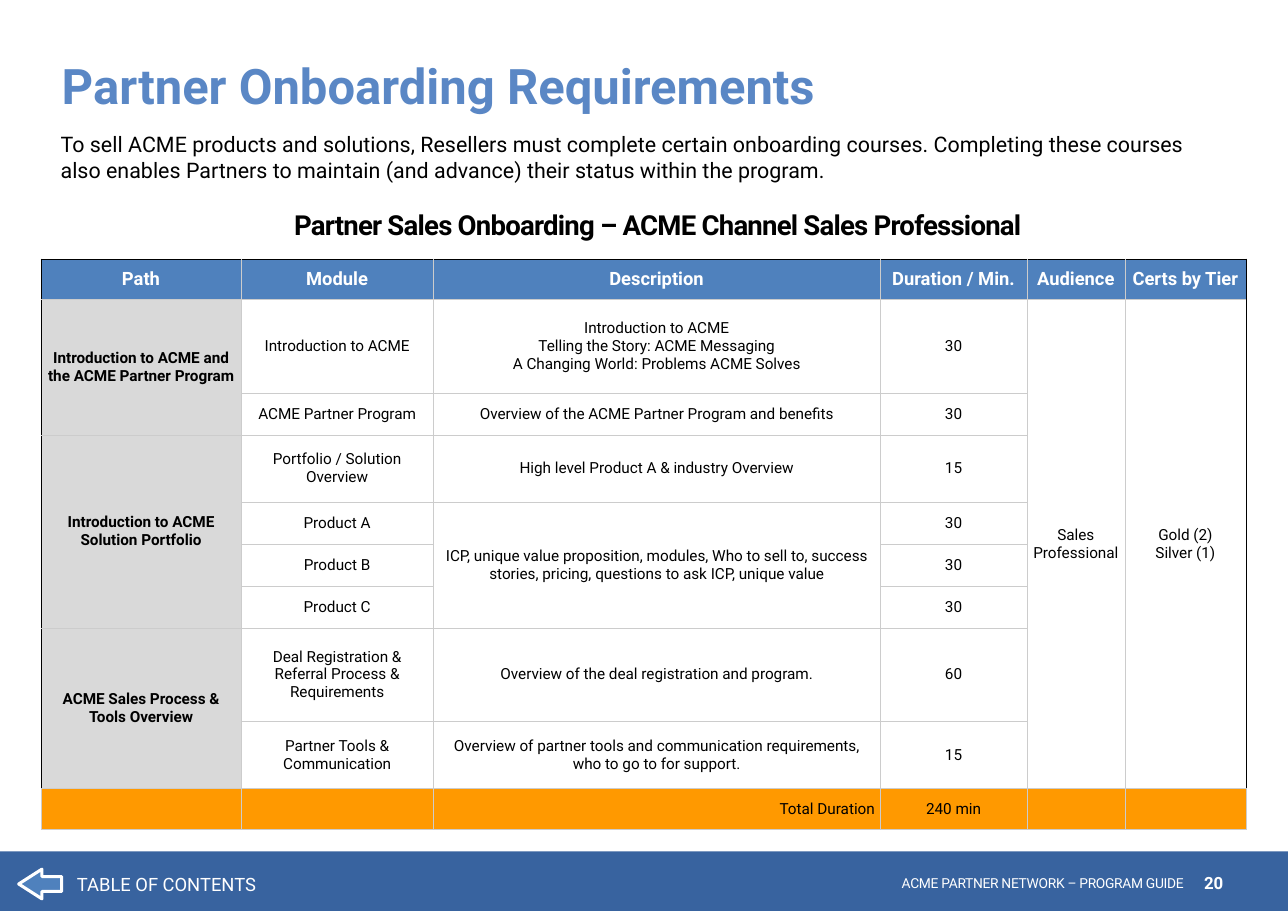
from pptx import Presentation
from pptx.dml.color import RGBColor
from pptx.enum.shapes import MSO_SHAPE as Shape
from pptx.enum.text import MSO_ANCHOR as Anchor, MSO_AUTO_SIZE as Fit, PP_ALIGN as Align
from pptx.oxml.ns import qn
from pptx.util import Inches, Pt
from lxml.etree import SubElement

# Content
TITLE = "Partner Onboarding Requirements"
INTRO = ("To sell ACME products and solutions, Resellers must complete certain "
         "onboarding courses. Completing these courses also enables Partners to "
         "maintain (and advance) their status within the program.")
HEADING = "Partner Sales Onboarding – ACME Channel Sales Professional"
GUIDE = "ACME PARTNER NETWORK – PROGRAM GUIDE"
BACK = "TABLE OF CONTENTS"
PAGE = "20"

ROWS = [
    ["Path", "Module", "Description", "Duration / Min.", "Audience", "Certs by Tier"],
    ["Introduction to ACME and the ACME Partner Program", "Introduction to ACME",
     "Introduction to ACME\vTelling the Story: ACME Messaging\v"
     "A Changing World: Problems ACME Solves",
     "30", "Sales Professional", "Gold (2)\vSilver (1)"],
    ["", "ACME Partner Program", "Overview of the ACME Partner Program and benefits",
     "30", "", ""],
    ["Introduction to ACME Solution Portfolio", "Portfolio / Solution Overview",
     "High level Product A & industry Overview", "15", "", ""],
    ["", "Product A",
     "ICP, unique value proposition, modules, Who to sell to, success stories, "
     "pricing, questions to ask ICP, unique value", "30", "", ""],
    ["", "Product B", "", "30", "", ""],
    ["", "Product C", "", "30", "", ""],
    ["ACME Sales Process & Tools Overview",
     "Deal Registration & Referral Process & Requirements",
     "Overview of the deal registration and program.", "60", "", ""],
    ["", "Partner Tools & Communication",
     "Overview of partner tools and communication requirements, "
     "who to go to for support.", "15", "", ""],
    ["", "", "Total Duration", "240 min", "", ""],
]
WIDTHS = [1.82, 1.74, 4.06, 1.33, 0.89, 1.1]
HEIGHTS = [0.37, 0.85, 0.38, 0.61, 0.38, 0.38, 0.38, 0.85, 0.61, 0.37]
# Merged cells: column, first row, last row
SPANS = [(0, 1, 2), (0, 3, 6), (0, 7, 8), (2, 4, 6), (4, 1, 8), (5, 1, 8)]

COLORS = {"title": "5A87C5", "band": "38639F", "head": "4F81BD", "path": "D9D9D9",
          "total": "FF9900", "grid": "CCCCCC", "black": "000000", "white": "FFFFFF"}
FONT = "Roboto"


def rgb(name):
    return RGBColor.from_string(COLORS[name])


def style(frame, text, size, color="black", bold=False, align=Align.LEFT,
          space=0, line=None):
    frame.text = text
    frame.word_wrap = True
    for para in frame.paragraphs:
        para.alignment = align
        if line:
            para.line_spacing = Pt(line)
        for run in para.runs:
            font = run.font
            font.name, font.size, font.bold = FONT, Pt(size), bold
            font.color.rgb = rgb(color)
            if space:
                run._r.get_or_add_rPr().set("spc", str(int(space * 100)))


def inset(part, left, top, right, bottom):
    part.margin_left, part.margin_top = Inches(left), Inches(top)
    part.margin_right, part.margin_bottom = Inches(right), Inches(bottom)


def label(slide, box, text, size, pad=(0, 0, 0, 0), **look):
    frame = slide.shapes.add_textbox(*map(Inches, box)).text_frame
    style(frame, text, size, **look)
    inset(frame, *pad)


def border(cell, row, col):
    last_row, last_col = len(ROWS) - 1, len(WIDTHS) - 1
    body = row < last_row
    dark = {"L": body and col == 0, "R": body and col == last_col,
            "T": row == 0, "B": False}
    props = cell._tc.get_or_add_tcPr()
    for side, black in dark.items():
        edge = SubElement(props, qn(f"a:ln{side}"), w=str(Pt(0.25)))
        fill = SubElement(edge, qn("a:solidFill"))
        SubElement(fill, qn("a:srgbClr"), val=COLORS["black" if black else "grid"])


def add_grid(slide):
    table = slide.shapes.add_table(
        len(ROWS), len(WIDTHS), Inches(0.37), Inches(2.35),
        Inches(sum(WIDTHS)), Inches(sum(HEIGHTS))).table
    for col, width in enumerate(WIDTHS):
        table.columns[col].width = Inches(width)
    for row, height in enumerate(HEIGHTS):
        table.rows[row].height = Inches(height)
    for row, texts in enumerate(ROWS):
        head, total = row == 0, row == len(ROWS) - 1
        for col, text in enumerate(texts):
            cell = table.cell(row, col)
            path = col == 0 and not total
            end = total and col == 2
            if text:
                style(cell.text_frame, text, 12 if head else 10,
                      "white" if head else "black", head or path,
                      Align.RIGHT if end else Align.CENTER)
            pad = 0.05 if text and not head else 0
            inset(cell, pad, pad, pad, pad)
            cell.vertical_anchor = Anchor.MIDDLE
            border(cell, row, col)
            tone = "head" if head else "total" if total else "path" if path else None
            if tone:
                cell.fill.solid()
                cell.fill.fore_color.rgb = rgb(tone)
            else:
                cell.fill.background()
    for col, first, last in SPANS:
        table.cell(first, col).merge(table.cell(last, col))


def add_shape(slide, kind, box, fill):
    shape = slide.shapes.add_shape(kind, *map(Inches, box))
    shape.shadow.inherit = False
    shape.fill.solid()
    shape.fill.fore_color.rgb = rgb(fill)
    shape.line.fill.background()
    return shape


def main():
    deck = Presentation()
    deck.slide_width, deck.slide_height = Inches(11.69), Inches(8.27)
    slide = deck.slides.add_slide(deck.slide_layouts[5])

    # Footer band
    add_shape(slide, Shape.RECTANGLE, (0, 7.73, 11.69, 0.54), "band")

    # Title and intro
    title = slide.shapes.title
    title.left, title.top = Inches(0.55), Inches(0.44)
    title.width, title.height = Inches(11.65), Inches(0.62)
    frame = title.text_frame
    style(frame, TITLE, 32, "title", True, line=34.5)
    inset(frame, 0.01, 0.12, 0, 0)
    frame.vertical_anchor = Anchor.TOP
    frame.auto_size = Fit.NONE
    label(slide, (0.55, 1.14, 10.59, 0.57), INTRO, 14, (0, 0.05, 0.1, 0.05))

    # Course table
    label(slide, (2.1, 1.88, 7.74, 0.32), HEADING, 18, (0, 0.01, 0, 0),
          bold=True, align=Align.CENTER, space=-0.5)
    add_grid(slide)

    # Footer text and back arrow
    label(slide, (10.89, 7.95, 0.27, 0.16), PAGE, 11, (0.04, 0, 0, 0),
          color="white", bold=True, space=-0.2, line=11.2)
    label(slide, (7.84, 7.96, 2.9, 0.13), GUIDE, 9, color="white",
          align=Align.RIGHT, space=-0.2, line=9.3)
    label(slide, (0.6, 7.88, 2.22, 0.3), BACK, 12, (0.1, 0.05, 0.1, 0.05),
          color="white")
    arrow = add_shape(slide, Shape.RIGHT_ARROW, (0.17, 7.89, 0.39, 0.27), "head")
    arrow.rotation = 180
    arrow.adjustments[0], arrow.adjustments[1] = 0.5, 0.78
    arrow.line.color.rgb = rgb("white")
    arrow.line.width = Pt(2)

    deck.save("out.pptx")


if __name__ == "__main__":
    main()
